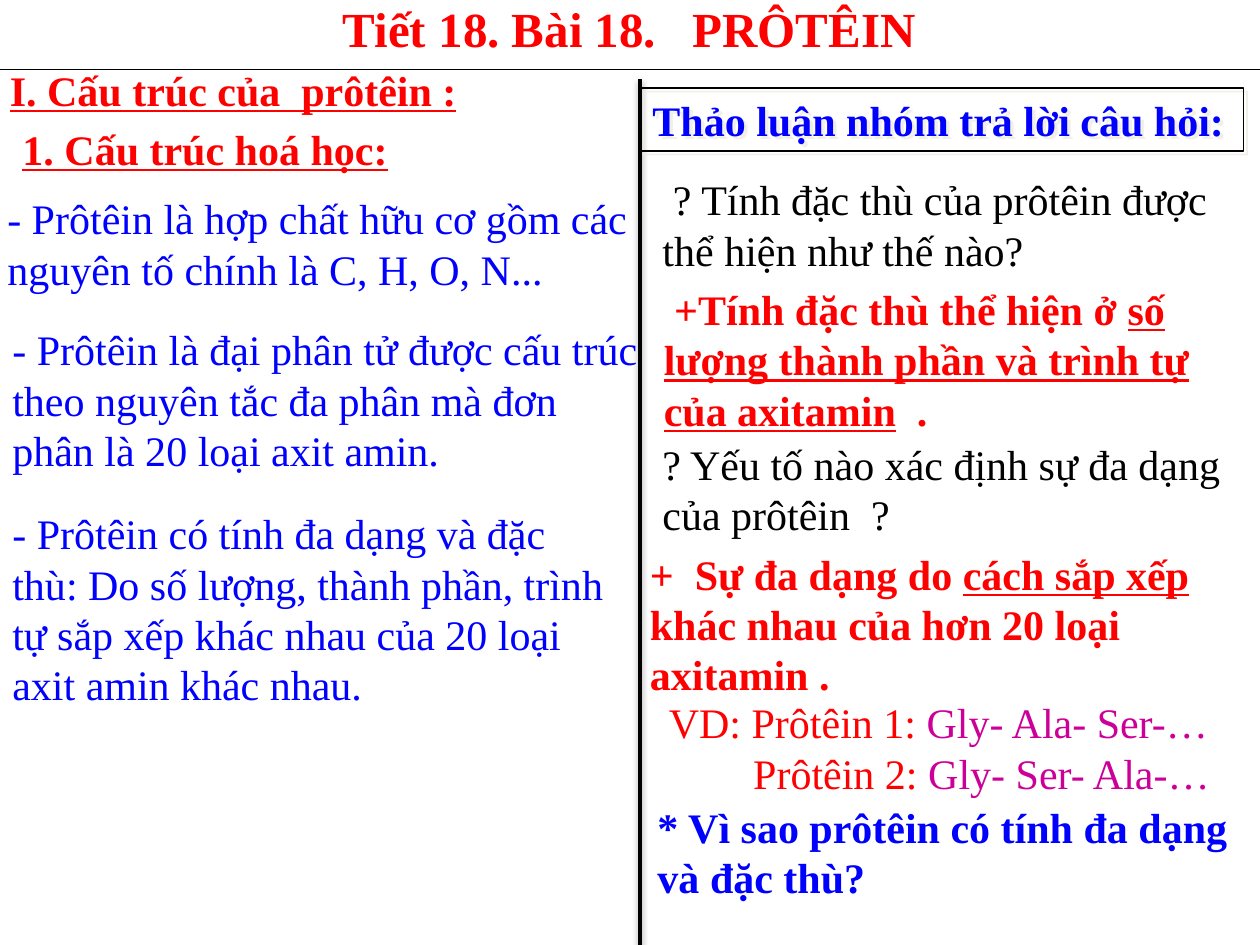
from lxml import etree
from pptx import Presentation
from pptx.dml.color import RGBColor
from pptx.enum.shapes import MSO_CONNECTOR, MSO_SHAPE
from pptx.enum.text import MSO_ANCHOR, MSO_AUTO_SIZE, PP_ALIGN
from pptx.oxml.ns import qn
from pptx.util import Inches, Pt

COLORS = {"red": "FF0000", "blue": "0000FF", "black": "000000",
          "magenta": "CC0099", "cream": "EEECE1"}
FONT = "Times New Roman"


def rgb(name):
    return RGBColor.from_string(COLORS[name])


def add_effects(properties, color=None, opacity=0, blur=0, distance=0, angle=0):
    """Add an effect list, with an outer shadow if a colour is given."""
    effects = etree.SubElement(properties, qn("a:effectLst"))
    if color:
        shadow = etree.SubElement(
            effects, qn("a:outerShdw"), blurRad=str(Pt(blur)),
            dist=str(Pt(distance)), dir=str(angle * 60000),
            algn="ctr", rotWithShape="0")
        tone = etree.SubElement(shadow, qn("a:srgbClr"), val=COLORS[color])
        etree.SubElement(tone, qn("a:alpha"), val=str(opacity * 1000))


def add_rule(slide, start, end, width):
    line = slide.shapes.add_connector(
        MSO_CONNECTOR.STRAIGHT, *(Inches(value) for value in start + end))
    line.line.color.rgb = rgb("black")
    line.line.width = Pt(width)
    return line


def fill_paragraph(paragraph, runs, color, size=24, bold=False):
    """Each run is (text, underlined, own colour or None)."""
    font = paragraph.font
    font.name, font.size, font.bold = FONT, Pt(size), bold
    font.color.rgb = rgb(color)
    paragraph.alignment = PP_ALIGN.LEFT
    for text, underlined, own_color in runs:
        run = paragraph.add_run()
        run.text = text
        if underlined:
            run.font.underline = True
        if own_color:
            run.font.color.rgb = rgb(own_color)


def prepare_frame(shape):
    frame = shape.text_frame
    frame.word_wrap = True
    frame.auto_size = MSO_AUTO_SIZE.SHAPE_TO_FIT_TEXT
    frame.vertical_anchor = MSO_ANCHOR.TOP
    return frame


def add_text(slide, box, runs, color, **style):
    if isinstance(runs, str):
        runs = [(runs, False, None)]
    frame = prepare_frame(
        slide.shapes.add_textbox(*(Inches(value) for value in box)))
    fill_paragraph(frame.paragraphs[0], runs, color, **style)
    return frame


def add_title(slide, left, top, width, height):
    frame = add_text(slide, (left + 0.08, top - 0.06, width - 0.17, 0.57),
                     "Tiết 18. Bài 18.   PRÔTÊIN", "red", size=28, bold=True)
    frame.paragraphs[0].alignment = PP_ALIGN.CENTER
    add_rule(slide, (left, top + height), (left + width, top + height), 0.75)


def add_lesson(slide, left, top):
    # Headings
    for x, y, width, text in (
            (-0.02, -0.09, 4.33, "I. Cấu trúc của  prôtêin :"),
            (0.08, 0.38, 4.75, "1. Cấu trúc hoá học:")):
        add_text(slide, (left + x, top + y, width, 0.5),
                 [(text, True, None)], "red", bold=True)
    # Notes
    for x, y, width, height, text in (
            (-0.04, 0.93, 5.54, 0.91,
             "- Prôtêin là hợp chất hữu cơ gồm các nguyên tố chính là "
             "C, H, O, N..."),
            (0, 1.97, 5.17, 1.31,
             "- Prôtêin là đại phân tử được cấu trúc theo nguyên tắc đa phân "
             "mà đơn phân là 20 loại axit amin."),
            (0, 3.43, 5, 1.72,
             "- Prôtêin có tính đa dạng và đặc thù: Do số lượng, thành phần, "
             "trình tự sắp xếp khác nhau của 20 loại axit amin khác nhau.")):
        add_text(slide, (left + x, top + y, width, height), text, "blue")


def add_discussion(slide, left, top, bottom):
    # Divider between the columns
    divider = add_rule(slide, (left, top + 0.08), (left, bottom), 2)
    add_effects(divider._element.spPr, "black", 38, 3.1, 1.6, 90)

    # Framed heading
    heading = slide.shapes.add_shape(
        MSO_SHAPE.RECTANGLE, Inches(left), Inches(top + 0.15),
        Inches(4.79), Inches(0.5))
    heading.fill.background()
    heading.line.color.rgb = rgb("black")
    heading.line.width = Pt(1)
    add_effects(heading._element.spPr, "cream", 80, 0, 2.8, 45)
    fill_paragraph(prepare_frame(heading).paragraphs[0],
                   [("Thảo luận nhóm trả lời câu hỏi:", False, None)],
                   "blue", bold=True)

    # Questions
    for y, text in ((0.78, " ? Tính đặc thù của prôtêin được thể hiện như thế nào?"),
                    (2.88, "? Yếu tố nào xác định sự đa dạng của prôtêin  ?")):
        add_text(slide, (left + 0.08, top + y, 4.76, 0.91), text, "black")

    # Answers
    for x, y, width, parts in (
            (0.09, 1.65, 4.83,
             (" +Tính đặc thù thể hiện ở ",
              "số lượng thành phần và trình tự của axitamin", "  .")),
            (-0.02, 3.75, 4.94,
             ("+  Sự đa dạng do ", "cách sắp xếp",
              " khác nhau của hơn 20 loại axitamin ."))):
        runs = [(text, index == 1, None) for index, text in enumerate(parts)]
        add_text(slide, (left + x, top + y, width, 1.31), runs, "red", bold=True)

    # Examples, the second one indented under the first
    examples = [[("VD: Prôtêin 1: ", False, None),
                 ("Gly- Ala- Ser-…", False, "magenta")],
                [("Prôtêin 2: ", False, None),
                 ("Gly- Ser- Ala-…", False, "magenta")]]
    frame = add_text(slide, (left + 0.13, top + 4.93, 4.67, 0.91),
                     examples[0], "red")
    second = frame.add_paragraph()
    fill_paragraph(second, examples[1], "red")
    second._p.get_or_add_pPr().set("marL", str(Inches(0.67)))

    # Closing question
    frame = add_text(slide, (left + 0.04, top + 5.76, 5, 0.91),
                     "* Vì sao prôtêin có tính đa dạng và đặc thù?",
                     "blue", bold=True)
    run = frame.paragraphs[0].runs[0]
    add_effects(run._r.get_or_add_rPr(), "cream", 80, 0, 2.8, 45)


def main():
    presentation = Presentation()
    presentation.slide_width = Inches(10)
    presentation.slide_height = Inches(7.5)
    slide = presentation.slides.add_slide(presentation.slide_layouts[6])
    add_title(slide, 0, 0, 10, 0.55)
    add_lesson(slide, 0, 0.55)
    add_discussion(slide, 5.08, 0.55, 7.5)
    # The title rule carries no shadow
    for shape in slide.shapes:
        properties = shape._element.spPr
        if shape.shape_type is not None and properties.find(qn("a:ln")) is not None \
                and properties.find(qn("a:effectLst")) is None:
            add_effects(properties)
    presentation.save("out.pptx")


if __name__ == "__main__":
    main()
